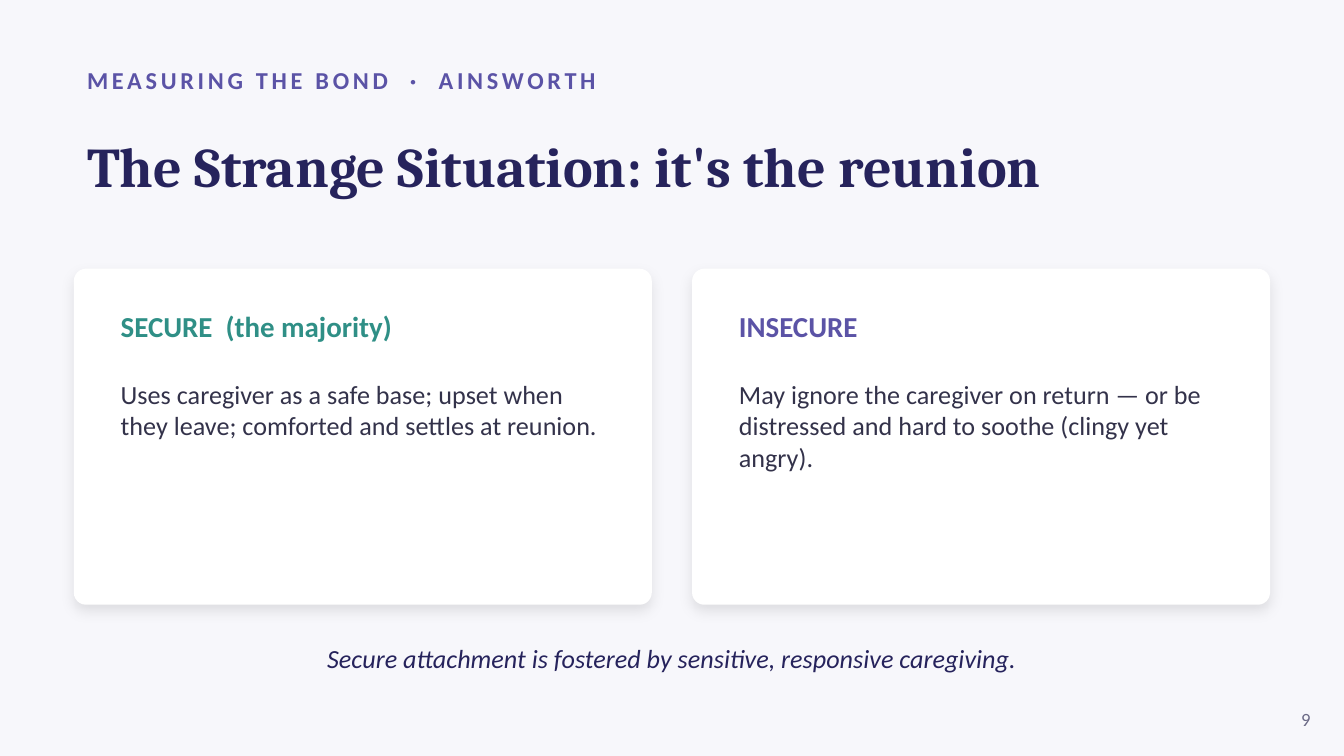
from lxml import etree
from pptx import Presentation
from pptx.dml.color import RGBColor
from pptx.enum.shapes import MSO_SHAPE
from pptx.enum.text import MSO_ANCHOR, PP_ALIGN
from pptx.oxml.ns import qn
from pptx.util import Inches, Pt

BACKGROUND = RGBColor(0xF7, 0xF7, 0xFB)
WHITE = RGBColor(0xFF, 0xFF, 0xFF)
VIOLET = RGBColor(0x5B, 0x53, 0xA6)
NAVY = RGBColor(0x26, 0x23, 0x5C)
TEAL = RGBColor(0x2F, 0x8F, 0x86)
INK = RGBColor(0x33, 0x32, 0x4A)
GREY = RGBColor(0x6B, 0x6A, 0x86)

MARGIN = 0.55
CONTENT_WIDTH = 8.9
CARD_GAP = 0.3
CARD_PADDING = 0.25
CARDS = [
    ("SECURE  (the majority)", TEAL,
     "Uses caregiver as a safe base; upset when they leave; "
     "comforted and settles at reunion."),
    ("INSECURE", VIOLET,
     "May ignore the caregiver on return — or be distressed and "
     "hard to soothe (clingy yet angry)."),
]


def style_font(font, size, color, name="Calibri", bold=False, italic=False):
    """Set the typeface, size, colour and emphasis of a font."""
    font.name = name
    font.size = Pt(size)
    font.color.rgb = color
    font.bold = bold
    font.italic = italic


def add_text_frame(slide, left, top, width, height, anchor=MSO_ANCHOR.MIDDLE):
    """Add a wrapping text box and return its text frame."""
    box = slide.shapes.add_textbox(
        Inches(left), Inches(top), Inches(width), Inches(height))
    frame = box.text_frame
    frame.word_wrap = True
    frame.vertical_anchor = anchor
    return frame


def add_line(slide, left, top, width, height, text, size, color,
             align=PP_ALIGN.LEFT, **emphasis):
    """Add a one-paragraph text box and return its run."""
    frame = add_text_frame(slide, left, top, width, height)
    frame.text = text
    paragraph = frame.paragraphs[0]
    paragraph.alignment = align
    run = paragraph.runs[0]
    style_font(run.font, size, color, **emphasis)
    return run


def add_soft_shadow(shape):
    """Give a shape a faint shadow straight below it."""
    shape.shadow.inherit = False
    effects = shape._element.spPr.find(qn("a:effectLst"))
    shadow = etree.SubElement(
        effects, qn("a:outerShdw"), blurRad=str(Pt(7)), dist=str(Pt(3)),
        dir="5400000", algn="bl", rotWithShape="0")
    black = etree.SubElement(shadow, qn("a:srgbClr"), val="000000")
    etree.SubElement(black, qn("a:alpha"), val="10000")


def add_header(slide, left, top, width):
    """Place the spaced kicker and the title below it."""
    kicker = add_line(slide, left, top, width + 0.1, 0.35,
                      "MEASURING THE BOND  ·  AINSWORTH", 13, VIOLET, bold=True)
    kicker.font._element.set("spc", "200")
    add_line(slide, left, top + 0.36, width, 0.9,
             "The Strange Situation: it's the reunion", 30, NAVY,
             name="Cambria", bold=True)


def add_card(slide, left, top, width, height):
    """Place a white rounded card with a soft shadow."""
    card = slide.shapes.add_shape(
        MSO_SHAPE.ROUNDED_RECTANGLE,
        Inches(left), Inches(top), Inches(width), Inches(height))
    card.adjustments[0] = 0.036
    card.fill.solid()
    card.fill.fore_color.rgb = WHITE
    card.line.fill.background()
    add_soft_shadow(card)


def add_card_text(slide, left, top, width, height, heading, color, description):
    """Place a card's heading and description inside its padding."""
    frame = add_text_frame(
        slide, left + CARD_PADDING, top + CARD_PADDING,
        width - 2 * CARD_PADDING, height - 0.4, MSO_ANCHOR.TOP)
    frame.text = heading
    heading_paragraph = frame.paragraphs[0]
    heading_paragraph.space_after = Pt(18.5)
    style_font(heading_paragraph.runs[0].font, 15.5, color, bold=True)
    description_paragraph = frame.add_paragraph()
    description_paragraph.text = description
    style_font(description_paragraph.runs[0].font, 14, INK)


def add_comparison(slide, left, top, width, height):
    """Place the attachment cards side by side."""
    card_width = (width - CARD_GAP * (len(CARDS) - 1)) / len(CARDS)
    boxes = [(left + i * (card_width + CARD_GAP), top, card_width, height)
             for i in range(len(CARDS))]
    for box in boxes:
        add_card(slide, *box)
    for box, content in zip(boxes, CARDS):
        add_card_text(slide, *box, *content)


def add_footer(slide, left, top, width):
    """Place the takeaway sentence and the page number."""
    add_line(slide, left, top, width, 0.4,
             "Secure attachment is fostered by sensitive, responsive caregiving.",
             14, NAVY, PP_ALIGN.CENTER, italic=True)
    add_line(slide, left + width - 0.1, top + 0.5, 0.5, 0.3,
             "9", 10, GREY, PP_ALIGN.RIGHT)


def main():
    """Build the slide and save it."""
    presentation = Presentation()
    presentation.slide_width = Inches(10)
    presentation.slide_height = Inches(10) * 9 // 16
    slide = presentation.slides.add_slide(presentation.slide_layouts[6])
    slide.background.fill.solid()
    slide.background.fill.fore_color.rgb = BACKGROUND
    add_header(slide, MARGIN, 0.42, CONTENT_WIDTH)
    add_comparison(slide, MARGIN, 2, CONTENT_WIDTH, 2.5)
    add_footer(slide, MARGIN, 4.7, CONTENT_WIDTH)
    presentation.save("out.pptx")


if __name__ == "__main__":
    main()
